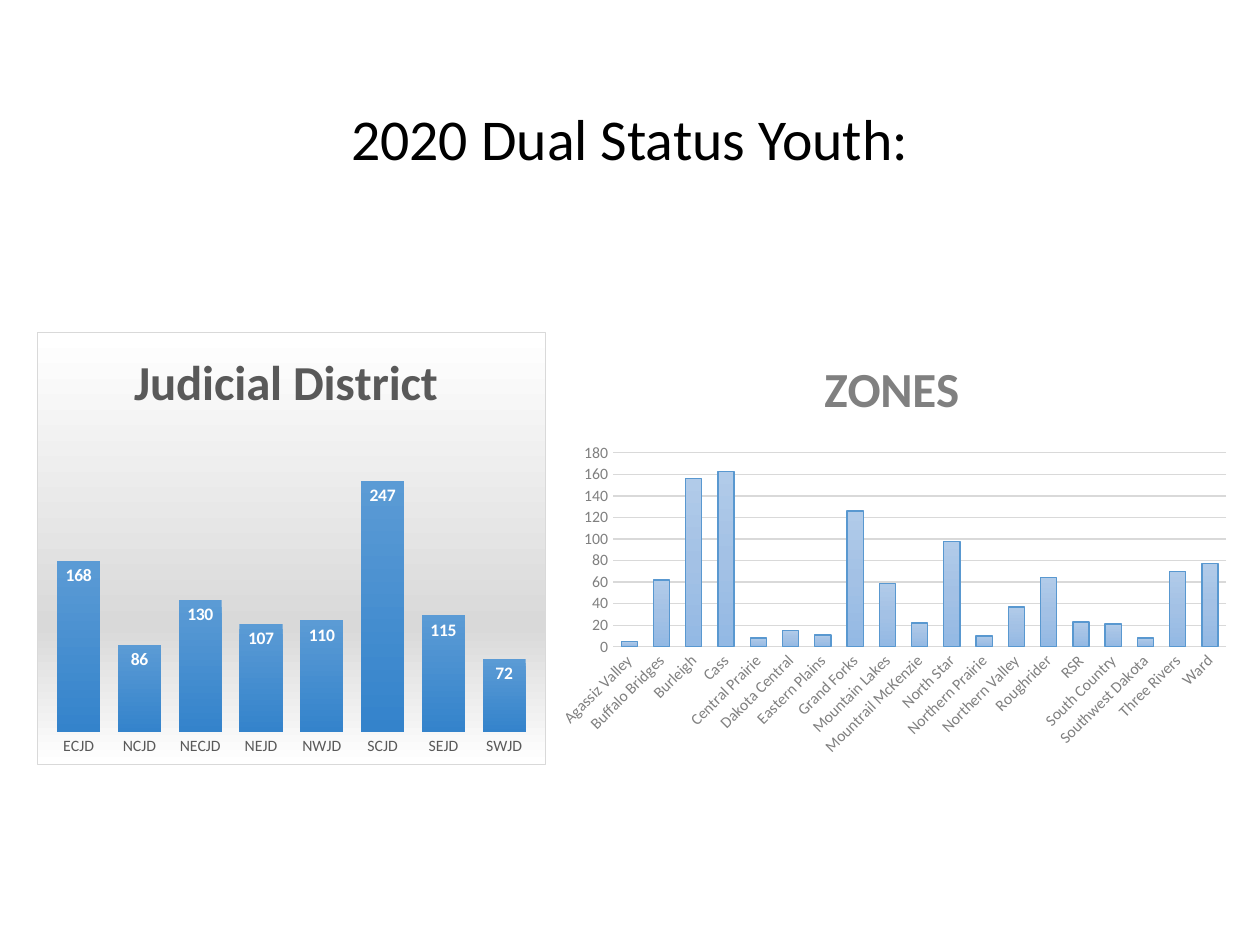
from lxml import etree
from pptx import Presentation
from pptx.chart.data import CategoryChartData
from pptx.dml.color import RGBColor
from pptx.enum.chart import XL_CHART_TYPE, XL_LABEL_POSITION, XL_TICK_MARK
from pptx.enum.text import MSO_ANCHOR, PP_ALIGN
from pptx.oxml import parse_xml
from pptx.util import Cm, Pt

COLUMNS = XL_CHART_TYPE.COLUMN_CLUSTERED
INSIDE_END = XL_LABEL_POSITION.INSIDE_END
NO_TICK = XL_TICK_MARK.NONE
MIDDLE, CENTER = MSO_ANCHOR.MIDDLE, PP_ALIGN.CENTER

BLACK = RGBColor(0x00, 0x00, 0x00)
WHITE = RGBColor(0xFF, 0xFF, 0xFF)
DARK_GRAY = RGBColor(0x59, 0x59, 0x59)
MID_GRAY = RGBColor(0x80, 0x80, 0x80)
LIGHT_GRAY = RGBColor(0xD9, 0xD9, 0xD9)
BLUE = RGBColor(0x5B, 0x9B, 0xD5)
DEEP_BLUE = RGBColor(0x34, 0x83, 0xCB)
OUTLINE_BLUE = RGBColor(0x59, 0x98, 0xD0)
PALE_BLUES = [RGBColor(0xB1, 0xCB, 0xE9), RGBColor(0xA3, 0xC1, 0xE5), RGBColor(0x93, 0xB9, 0xE4)]

FONT = "Calibri"
HEADING = "2020 Dual Status Youth:"
DISTRICTS = {
    "ECJD": 168, "NCJD": 86, "NECJD": 130, "NEJD": 107,
    "NWJD": 110, "SCJD": 247, "SEJD": 115, "SWJD": 72,
}
ZONES = {
    "Agassiz Valley": 5, "Buffalo Bridges": 62, "Burleigh": 156, "Cass": 163,
    "Central Prairie": 8, "Dakota Central": 15, "Eastern Plains": 11,
    "Grand Forks": 126, "Mountain Lakes": 59, "Mountrail McKenzie": 22,
    "North Star": 98, "Northern Prairie": 10, "Northern Valley": 37,
    "Roughrider": 64, "RSR": 23, "South Country": 21, "Southwest Dakota": 8,
    "Three Rivers": 70, "Ward": 77,
}

C = "http://schemas.openxmlformats.org/drawingml/2006/chart"
A = "http://schemas.openxmlformats.org/drawingml/2006/main"


def gradient(stops):
    marks = "".join(
        f'<a:gs pos="{position * 1000}"><a:srgbClr val="{color}"/></a:gs>'
        for position, color in stops
    )
    return parse_xml(
        f'<a:gradFill xmlns:a="{A}" rotWithShape="1"><a:gsLst>{marks}</a:gsLst>'
        '<a:lin ang="5400000" scaled="0"/></a:gradFill>'
    )


def place(parent, box, lengths, inner=False):
    for old in parent.findall(f"{{{C}}}layout"):
        parent.remove(old)
    layout = etree.Element(f"{{{C}}}layout")
    manual = etree.SubElement(layout, f"{{{C}}}manualLayout")
    settings = {"layoutTarget": "inner"} if inner else {}
    settings.update(xMode="edge", yMode="edge")
    for tag, length, whole in zip("xywh", lengths, box[2:] * 2):
        settings[tag] = length / whole
    for tag, value in settings.items():
        etree.SubElement(manual, f"{{{C}}}{tag}").set("val", str(value))
    text = parent.find(f"{{{C}}}tx")
    if text is None:
        parent.insert(0, layout)
    else:
        text.addnext(layout)


def style_font(font, size, color, bold=False):
    font.name, font.size, font.bold = FONT, Pt(size), bold
    font.color.rgb = color


def style_axis(axis, color, line):
    axis.major_tick_mark = axis.minor_tick_mark = NO_TICK
    style_font(axis.tick_labels.font, 9, color)
    if line is None:
        axis.format.line.fill.background()
    else:
        axis.format.line.color.rgb = line
        axis.format.line.width = Pt(0.75)


def add_columns(slide, box, heading, counts, color, axis_line, bar_stops,
                gap, overlap, top, title_at, plot_at):
    data = CategoryChartData()
    data.categories = list(counts)
    data.add_series("Series 1", list(counts.values()))
    chart = slide.shapes.add_chart(COLUMNS, *map(Cm, box), data).chart
    style_font(chart.font, 10, BLACK)
    chart.has_legend = False
    chart.has_title = True
    title = chart.chart_title
    title.include_in_layout = False
    paragraph = title.text_frame.paragraphs[0]
    paragraph.text = heading
    style_font(paragraph.font, 28, color, True)
    place(title._element, box, title_at)
    place(chart._chartSpace.chart.plotArea, box, plot_at, True)

    style_axis(chart.category_axis, color, axis_line)
    style_axis(chart.value_axis, color, None)
    chart.value_axis.minimum_scale = 0
    chart.value_axis.maximum_scale = top
    plot = chart.plots[0]
    plot.gap_width, plot.overlap = gap, overlap
    plot.vary_by_categories = False
    plot.series[0]._element.get_or_add_spPr().insert(0, gradient(bar_stops))
    return chart


prs = Presentation()
prs.slide_width, prs.slide_height = Cm(25.4), Cm(19.05)
slide = prs.slides.add_slide(prs.slide_layouts[6])

heading_frame = slide.shapes.add_textbox(Cm(1.75), Cm(1.02), Cm(21.9), Cm(3.68)).text_frame
heading_frame.word_wrap = True
heading_frame.vertical_anchor = MIDDLE
heading = heading_frame.paragraphs[0]
heading.text = HEADING
heading.alignment = CENTER
heading.line_spacing = 0.9
style_font(heading.font, 33, BLACK)

districts = add_columns(
    slide, (0.75, 6.69, 10.26, 8.73), "Judicial District", DISTRICTS, DARK_GRAY, None,
    [(0, BLUE), (100, DEEP_BLUE)], 41, 0, 300, (1.77, 0.15), (0.21, 1.91, 9.83, 6.18),
)
districts.value_axis.has_major_gridlines = False
districts.value_axis.visible = False
labels = districts.plots[0].series[0].data_labels
labels.show_value = True
labels.position = INSIDE_END
style_font(labels.font, 10, WHITE, True)
panel = parse_xml(
    f'<c:spPr xmlns:c="{C}" xmlns:a="{A}"><a:ln w="9525"><a:solidFill>'
    f'<a:srgbClr val="{LIGHT_GRAY}"/></a:solidFill></a:ln></c:spPr>'
)
panel.insert(0, gradient([(0, WHITE), (68, LIGHT_GRAY), (100, WHITE)]))
districts._chartSpace.chart.addnext(panel)

zones = add_columns(
    slide, (11, 6.68, 14, 8.76), "ZONES", ZONES, MID_GRAY, LIGHT_GRAY,
    list(zip((0, 50, 100), PALE_BLUES)), 100, -24, 180, (5.44, 0.31), (1.36, 2.45, 12.36, 3.91),
)
zones.value_axis.major_unit = 20
zones.value_axis.has_major_gridlines = True
grid = zones.value_axis.major_gridlines.format.line
grid.color.rgb, grid.width = LIGHT_GRAY, Pt(0.75)
outline = zones.plots[0].series[0].format.line
outline.color.rgb, outline.width = OUTLINE_BLUE, Pt(0.75)

prs.save("out.pptx")
